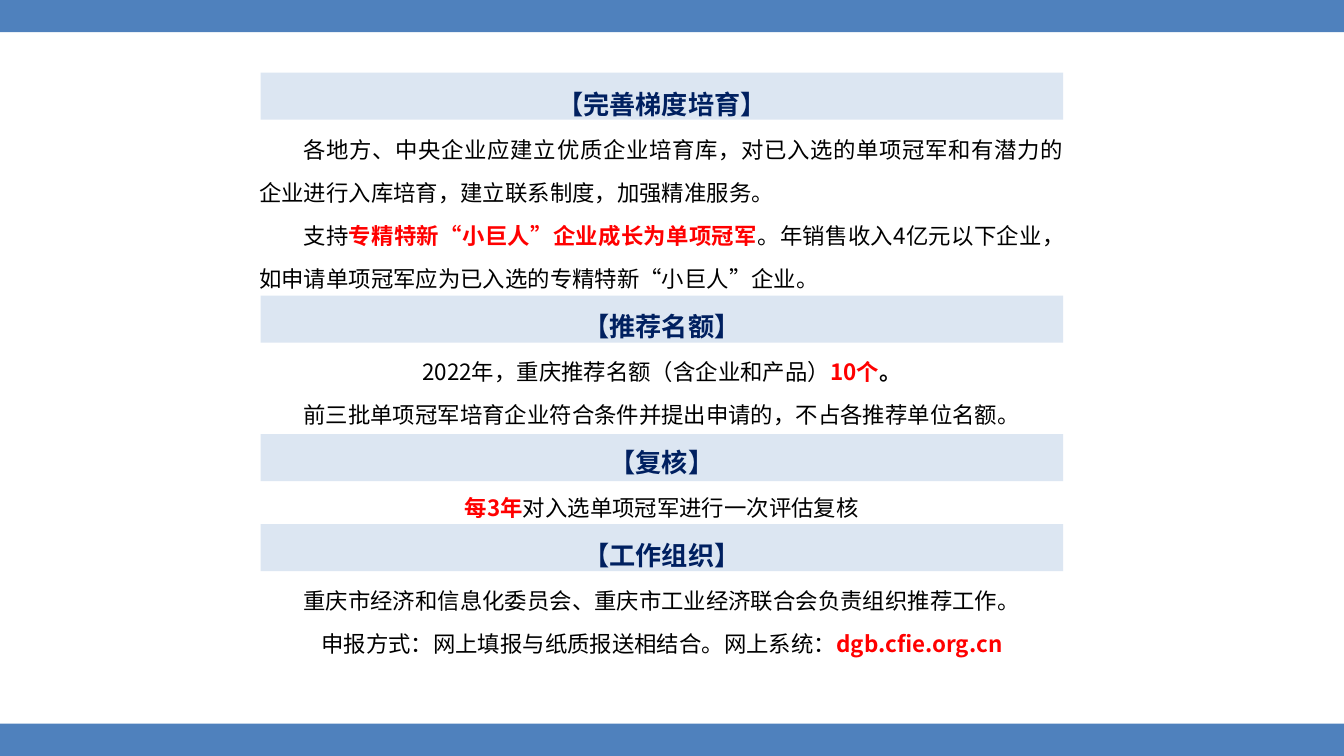
from lxml.etree import SubElement
from pptx import Presentation
from pptx.dml.color import RGBColor
from pptx.enum.shapes import MSO_SHAPE as Shape
from pptx.enum.text import MSO_AUTO_SIZE as AutoSize, PP_ALIGN as Align
from pptx.oxml.ns import qn
from pptx.util import Inches, Pt

WIDTH = 10
HEIGHT = WIDTH * 9 / 16
EDGE_HEIGHT = 0.24
BAND_LEFT, BAND_WIDTH, BAND_HEIGHT = 1.94, 5.97, 0.35
BAND_TOPS = (0.54, 2.2, 3.23, 3.9)
FONT = "Noto Sans CJK SC"

BLUE = RGBColor(0x4F, 0x81, 0xBD)
PALE = RGBColor(0xDC, 0xE6, 0xF2)
NAVY = RGBColor(0x00, 0x20, 0x60)
BLACK = RGBColor(0, 0, 0)
RED = RGBColor(0xFF, 0, 0)

PLAIN = (12, BLACK, False)
STRONG = (12, BLACK, True)
KEY = (12, RED, True)
TITLE = (14, NAVY, True)


def add_bar(slide, left, top, width, height, colour):
    """Add a flat, borderless rectangle, measured in inches."""
    bar = slide.shapes.add_shape(Shape.RECTANGLE, *map(Inches, (left, top, width, height)))
    bar.shadow.inherit = False
    bar.fill.solid()
    bar.fill.fore_color.rgb = colour
    bar.line.fill.background()


def add_run(paragraph, wording, style):
    """Add one run in the given size, colour and weight."""
    run = paragraph.add_run()
    run.text = wording
    size, colour, bold = style
    run.font.size, run.font.bold = Pt(size), bold
    run.font.color.rgb = colour
    run.font.name = FONT
    SubElement(run.font._element, qn("a:ea"), typeface=FONT)


def add_line(frame, runs, align=Align.CENTER, indent=0):
    """Fill the empty first paragraph, or a new one, with styled runs."""
    first = frame.paragraphs[0]
    paragraph = frame.add_paragraph() if first.runs else first
    paragraph.alignment = align
    paragraph.line_spacing = 1.6
    properties = paragraph._p.get_or_add_pPr()
    properties.set("marL", "0")
    properties.set("indent", str(Inches(indent)))
    for wording, style in runs:
        add_run(paragraph, wording, style)


def add_heading(frame, title):
    """Add a bracketed section title."""
    add_line(frame, [(f"【{title}】", TITLE)], indent=-0.5)


def add_body(frame, *runs):
    """Add a justified paragraph with an indented first line."""
    add_line(frame, runs, Align.JUSTIFY, 0.33)


def add_policy(slide):
    """Add the four sections of the policy in one text box."""
    policy = slide.shapes.add_textbox(*map(Inches, (1.83, 0.47, 6.19, 4.51)))
    frame = policy.text_frame
    frame.word_wrap = True
    frame.auto_size = AutoSize.SHAPE_TO_FIT_TEXT

    add_heading(frame, "完善梯度培育")
    add_body(frame, ("各地方、中央企业应建立优质企业培育库，对已入选的单项冠军和有潜力的"
                     "企业进行入库培育，建立联系制度，加强精准服务。", PLAIN))
    add_body(frame, ("支持", PLAIN),
             ("专精特新“小巨人”企业成长为单项冠军", KEY),
             ("。年销售收入4亿元以下企业，如申请单项冠军应为已入选的"
              "专精特新“小巨人”企业。", PLAIN))

    add_heading(frame, "推荐名额")
    add_line(frame, [("2022年，重庆推荐名额（含企业和产品）", PLAIN),
                     ("10个", KEY), ("。", STRONG)])
    add_line(frame, [("前三批单项冠军培育企业符合条件并提出申请的，不占各推荐单位名额。", PLAIN)])

    add_heading(frame, "复核")
    add_line(frame, [("每3年", KEY), ("对入选单项冠军进行一次评估复核", PLAIN)])

    add_heading(frame, "工作组织")
    add_line(frame, [("重庆市经济和信息化委员会、重庆市工业经济联合会负责组织推荐工作。", PLAIN)])
    add_line(frame, [("申报方式：网上填报与纸质报送相结合。网上系统：", PLAIN),
                     ("dgb.cfie.org.cn", KEY)])


def main():
    """Build and save the slide."""
    deck = Presentation()
    deck.slide_width, deck.slide_height = Inches(WIDTH), Inches(HEIGHT)
    slide = deck.slides.add_slide(deck.slide_layouts[6])
    for top in (0, HEIGHT - EDGE_HEIGHT):
        add_bar(slide, 0, top, WIDTH, EDGE_HEIGHT, BLUE)
    for top in BAND_TOPS:
        add_bar(slide, BAND_LEFT, top, BAND_WIDTH, BAND_HEIGHT, PALE)
    add_policy(slide)
    deck.save("out.pptx")


if __name__ == "__main__":
    main()
